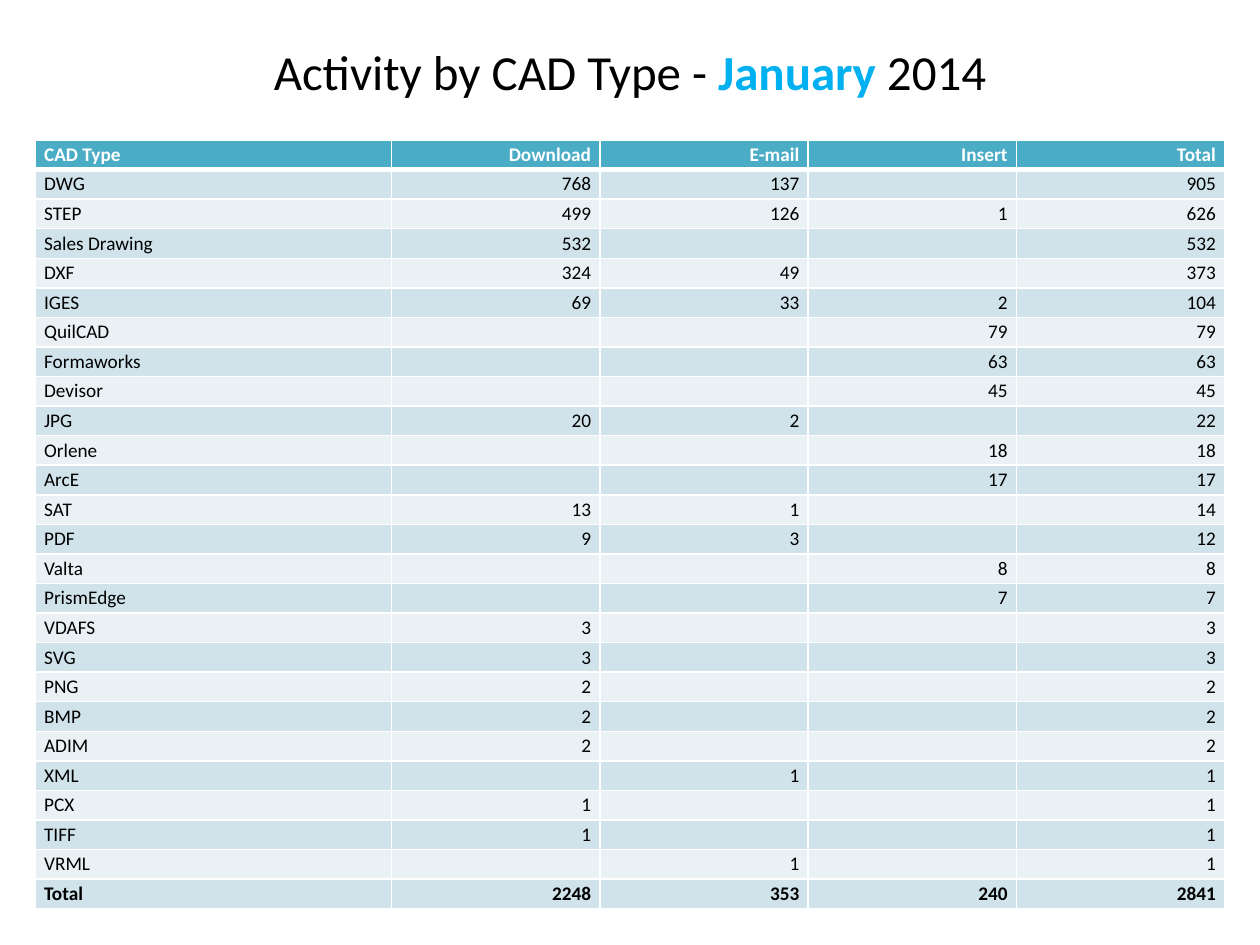
"""Build the monthly CAD activity slide with its title and totals table."""
from dataclasses import dataclass

from lxml.etree import SubElement
from pptx import Presentation
from pptx.dml.color import RGBColor
from pptx.enum.text import MSO_ANCHOR as Anchor, MSO_AUTO_SIZE as AutoSize, PP_ALIGN as Align
from pptx.oxml.ns import qn
from pptx.slide import Slide
from pptx.util import Pt

BLACK = RGBColor(0x00, 0x00, 0x00)
WHITE = RGBColor(0xFF, 0xFF, 0xFF)
HIGHLIGHT = RGBColor(0x00, 0xB0, 0xF0)
HEADER_FILL = RGBColor(0x4B, 0xAC, 0xC6)
DARK_BAND = RGBColor(0xD0, 0xE3, 0xEA)
LIGHT_BAND = RGBColor(0xE9, 0xF1, 0xF5)

HEADINGS = ("CAD Type", "Download", "E-mail", "Insert", "Total")
ACTIVITY = (
    ("DWG", 768, 137, 0),
    ("STEP", 499, 126, 1),
    ("Sales Drawing", 532, 0, 0),
    ("DXF", 324, 49, 0),
    ("IGES", 69, 33, 2),
    ("QuilCAD", 0, 0, 79),
    ("Formaworks", 0, 0, 63),
    ("Devisor", 0, 0, 45),
    ("JPG", 20, 2, 0),
    ("Orlene", 0, 0, 18),
    ("ArcE", 0, 0, 17),
    ("SAT", 13, 1, 0),
    ("PDF", 9, 3, 0),
    ("Valta", 0, 0, 8),
    ("PrismEdge", 0, 0, 7),
    ("VDAFS", 3, 0, 0),
    ("SVG", 3, 0, 0),
    ("PNG", 2, 0, 0),
    ("BMP", 2, 0, 0),
    ("ADIM", 2, 0, 0),
    ("XML", 0, 1, 0),
    ("PCX", 1, 0, 0),
    ("TIFF", 1, 0, 0),
    ("VRML", 0, 1, 0),
)


def apply(target, **formats):
    for attribute, value in formats.items():
        setattr(target, attribute, value)


@dataclass
class ActivitySlide:
    slide: Slide
    font: str = "Calibri"
    title_size: float = 28
    table_size: float = 11
    left: float = 20.2
    width: float = 679.6
    row_height: float = 16.92
    label_width: float = 203.6
    count_width: float = 119

    def add_run(self, paragraph, text, size, color, bold=False):
        run = paragraph.add_run()
        run.text = text
        apply(run.font, name=self.font, size=Pt(size), bold=bold)
        run.font.color.rgb = color

    def title(self, parts):
        heading = self.slide.shapes.title
        apply(heading, left=Pt(self.left), top=Pt(20.2), width=Pt(self.width), height=Pt(41))
        apply(heading.text_frame, word_wrap=True, auto_size=AutoSize.SHAPE_TO_FIT_TEXT,
              vertical_anchor=Anchor.TOP)
        line = heading.text_frame.paragraphs[0]
        line.alignment = Align.CENTER
        for text, color, bold in parts:
            self.add_run(line, text, self.title_size, color, bold)

    def border(self, cell, side, weight):
        line = SubElement(cell._tc.get_or_add_tcPr(), qn(f"a:ln{side}"), w=str(Pt(weight)))
        fill = SubElement(line, qn("a:solidFill"))
        SubElement(fill, qn("a:srgbClr"), val=str(WHITE))

    def cell(self, cell, text, fill, color, bold, align, weights):
        apply(cell, margin_left=Pt(5), margin_right=Pt(5), margin_top=0, margin_bottom=0,
              vertical_anchor=Anchor.MIDDLE)
        for side, weight in weights.items():
            self.border(cell, side, weight)
        cell.fill.solid()
        cell.fill.fore_color.rgb = fill
        paragraph = cell.text_frame.paragraphs[0]
        paragraph.alignment = align
        if text:
            self.add_run(paragraph, text, self.table_size, color, bold)
        else:
            SubElement(paragraph._p, qn("a:endParaRPr"), sz=str(self.table_size * 100))

    def table(self, rows, top):
        frame = self.slide.shapes.add_table(
            len(rows), len(rows[0]), Pt(self.left), Pt(top),
            Pt(self.width), Pt(self.row_height * len(rows)))
        grid = frame.table
        grid.horz_banding = False
        for index, column in enumerate(grid.columns):
            column.width = Pt(self.count_width if index else self.label_width)
        for index, values in enumerate(rows):
            grid.rows[index].height = Pt(self.row_height)
            header = index == 0
            fill = HEADER_FILL if header else DARK_BAND if index % 2 else LIGHT_BAND
            color = WHITE if header else BLACK
            bold = index in (0, len(rows) - 1)
            weights = {"L": 1, "R": 1, "T": 3 if index == 1 else 1, "B": 3 if header else 1}
            for position, value in enumerate(values):
                align = Align.RIGHT if position else Align.LEFT
                self.cell(grid.cell(index, position), str(value or ""), fill, color, bold,
                          align, weights)


def main():
    deck = Presentation()
    apply(deck, slide_width=Pt(720), slide_height=Pt(540))
    page = ActivitySlide(deck.slides.add_slide(deck.slide_layouts[5]))
    page.title((("Activity by CAD Type - ", BLACK, False),
                ("January", HIGHLIGHT, True),
                (" 2014", BLACK, False)))
    with_totals = [(name, *counts, sum(counts)) for name, *counts in ACTIVITY]
    column_totals = [sum(column) for column in list(zip(*with_totals))[1:]]
    page.table([HEADINGS, *with_totals, ("Total", *column_totals)], top=80)
    deck.save("out.pptx")


if __name__ == "__main__":
    main()
